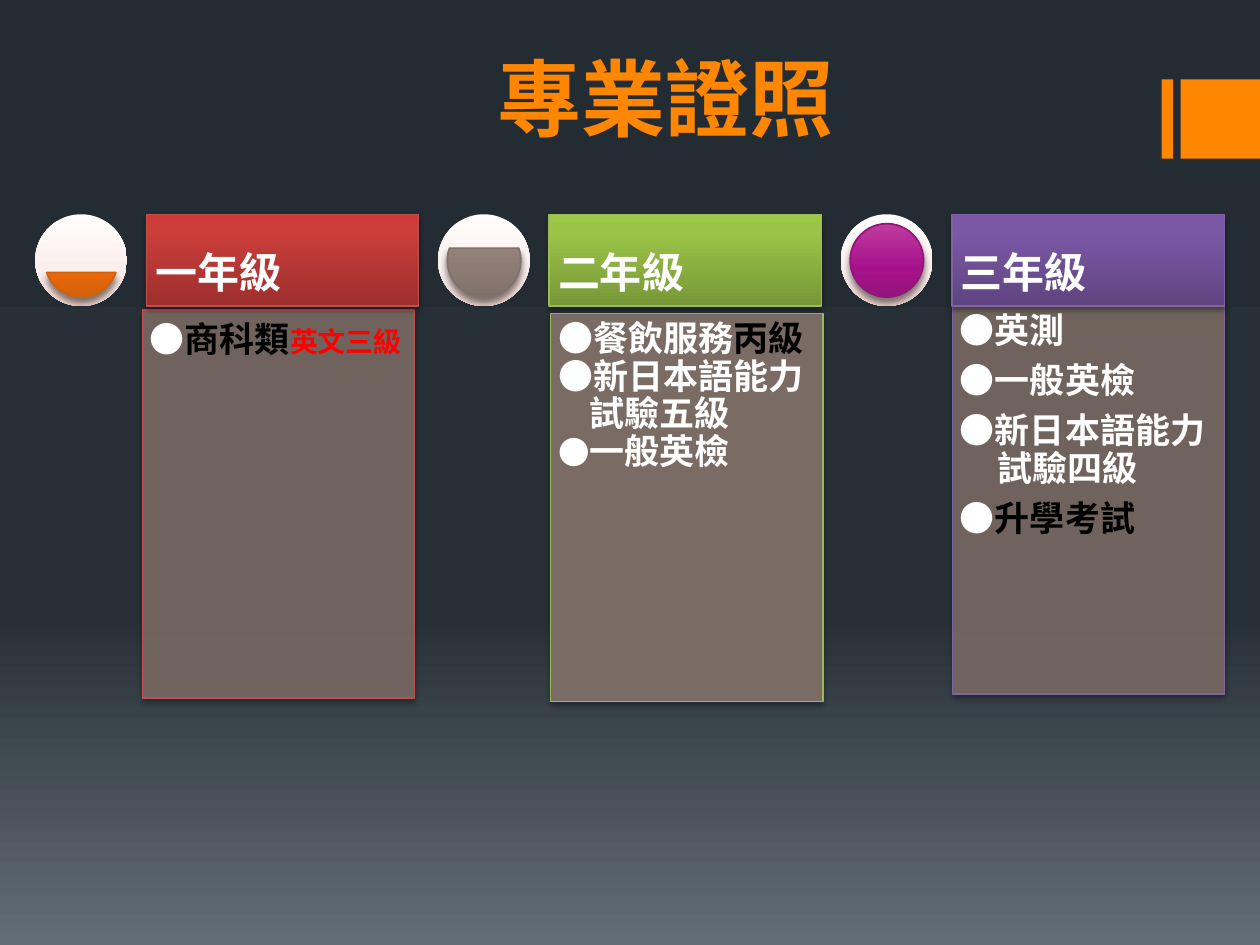
from lxml.etree import SubElement
from pptx import Presentation
from pptx.dml.color import RGBColor
from pptx.enum.shapes import MSO_SHAPE as Shape
from pptx.enum.text import MSO_ANCHOR as Anchor, MSO_AUTO_SIZE as AutoSize, PP_ALIGN as Align
from pptx.oxml.ns import qn
from pptx.util import Cm, Pt

FONT = "Noto Sans CJK SC"
COLORS = {
    "orange": "FF8600", "white": "FFFFFF", "black": "000000", "red": "FF0000", "panel": "7A6B65",
    "red edge": "C0504D", "green edge": "9BBB59", "purple edge": "8064A2",
}
GRADIENTS = {
    "page": [(0, "242C33"), (65, "273037"), (100, "636D76")],
    "ring": [(0, "FFFEFD"), (60, "FAEFED"), (100, "EED2CC")],
    "orange": [(0, "EE7F4C"), (60, "EE6A07"), (100, "D2610C")],
    "brown": [(0, "9B8C86"), (60, "8D7C74"), (100, "80716A")],
    "magenta": [(0, "BF3B9F"), (60, "A7128B"), (100, "94147C")],
    "red": [(0, "CE3B37"), (20, "CB3E3A"), (100, "9C2F2D")],
    "green": [(0, "9DC746"), (20, "9BC348"), (100, "779737")],
    "purple": [(0, "7C57A8"), (20, "7B58A6"), (100, "5F4480")],
}


def paint_gradient(owner, fill, name):
    fill.gradient()
    fill.gradient_angle = 270
    stops = next(owner.iter(qn("a:gsLst")))
    for stop in list(stops):
        stops.remove(stop)
    for position, color in GRADIENTS[name]:
        stop = SubElement(stops, qn("a:gs"), pos=str(position * 1000))
        SubElement(stop, qn("a:srgbClr"), val=color)


def cast_shadow(shape, opacity, blur, distance):
    shape.shadow.inherit = False
    effects = shape._element.spPr.find(qn("a:effectLst"))
    shadow = SubElement(effects, qn("a:outerShdw"), blurRad=str(Pt(blur)),
                        dist=str(Pt(distance)), dir="5400000", rotWithShape="0")
    color = SubElement(shadow, qn("a:srgbClr"), val=COLORS["black"])
    SubElement(color, qn("a:alpha"), val=str(opacity * 1000))


deck = Presentation()
deck.slide_width, deck.slide_height = Cm(25.4), Cm(19.05)
page = deck.slides.add_slide(deck.slide_layouts.get_by_name("Comparison"))
paint_gradient(page._element, page.background.fill, "page")

for left, width in [(23.42, 0.23), (23.8, 1.6)]:
    bar = page.shapes.add_shape(Shape.RECTANGLE, Cm(left), Cm(1.6), Cm(width), Cm(1.6))
    bar.shadow.inherit = False
    bar.fill.solid()
    bar.fill.fore_color.rgb = RGBColor.from_string(COLORS["orange"])
    bar.line.fill.background()

title = page.shapes.title
title.left, title.top, title.width, title.height = Cm(6.35), Cm(0.97), Cm(14.15), Cm(1.96)
texts = [(title, Anchor.MIDDLE, Align.CENTER, 0.25, 48, 1, 0, "orange",
          [(0, 0, [("專業證照", {})])])]

BLACK = {"color": "black"}
GRADES = [
    ("一年級", "red", "orange", (11.68, 96.32), (2.87, 6.25), 90, 1, 0, [
        (0, 0, [("●", {}), ("商科類", BLACK), ("英文三級", {"color": "red", "size": 16})]),
    ]),
    ("二年級", "green", "brown", (204.32, 119.68), (11.1, 6.32), 100, 0.9, 0, [
        (0, 0, [("●餐飲服務", {}), ("丙級", BLACK)]),
        (0, 0, [("●新日本語能力", {})]),
        (0.64, 0, [("試驗五級", {})]),
        (0.48, -0.48, [("●", {"size": 18}), ("一般英檢", {})]),
    ]),
    ("三年級", "purple", "magenta", (162, 162), (19.2, 6.17), 90, 0.9, 7, [
        (0, 0, [("●", {}), ("英測", {"font": "Arial"})]),
        (0, 0, [("●一般英檢", {})]),
        (0.76, -0.76, [("●新日本語能力試驗四級", {})]),
        (0, 0, [("●", {}), ("升學考試", BLACK)]),
    ]),
]

panels = [box for box in page.placeholders if box.placeholder_format.idx in (1, 2, 3)]
for box in list(page.placeholders):
    if box.placeholder_format.idx > 3:
        box._element.getparent().remove(box._element)

for index, (grade, theme, level, angles, corner, opacity, spacing, after, items) in enumerate(GRADES):
    offset = 8.12 * index
    edge = RGBColor.from_string(COLORS[theme + " edge"])

    ring = page.shapes.add_shape(Shape.OVAL, Cm(0.71 + offset), Cm(4.32), Cm(1.85), Cm(1.85))
    ring.shadow.inherit = False
    paint_gradient(ring._element, ring.fill, "ring")
    ring.line.fill.background()

    gauge = page.shapes.add_shape(Shape.CHORD, Cm(0.9 + offset), Cm(4.51), Cm(1.48), Cm(1.48))
    gauge.adjustments[0], gauge.adjustments[1] = angles
    paint_gradient(gauge._element, gauge.fill, level)
    gauge.line.color.rgb = RGBColor.from_string(GRADIENTS[level][-1][1])
    gauge.line.width = Pt(1)
    cast_shadow(gauge, 48, 3.8, 3)

    panel = panels[index]
    panel.left, panel.top, panel.width, panel.height = Cm(corner[0]), Cm(corner[1]), Cm(5.49), Cm(7.82)
    panel.fill.solid()
    panel.fill.fore_color.rgb = RGBColor.from_string(COLORS["panel"])
    color = next(panel._element.spPr.iter(qn("a:srgbClr")))
    SubElement(color, qn("a:alpha"), val=str(opacity * 1000))

    header = page.shapes.add_shape(Shape.RECTANGLE, Cm(2.95 + offset), Cm(4.32), Cm(5.49), Cm(1.85))
    paint_gradient(header._element, header.fill, theme)
    for shape in (panel, header):
        shape.line.color.rgb = edge
        shape.line.width = Pt(0.75)
        cast_shadow(shape, 35, 3.1, 1.8)

    texts.append((panel, Anchor.TOP, Align.LEFT, 0.15, 20, spacing, after, "white", items))
    texts.append((header, Anchor.BOTTOM, Align.LEFT, 0.18, 24, 0.9, 0, "white",
                  [(0, 0, [(grade, {})])]))

for box, anchor, align, inset, size, spacing, after, color, items in texts:
    frame = box.text_frame
    frame.word_wrap = True
    frame.auto_size = AutoSize.NONE
    frame.vertical_anchor = anchor
    frame.margin_left = frame.margin_right = frame.margin_top = frame.margin_bottom = Cm(inset)
    for number, (margin, indent, spans) in enumerate(items):
        para = frame.add_paragraph() if number else frame.paragraphs[0]
        para.alignment = align
        para.line_spacing = spacing
        para.space_before, para.space_after = Pt(0), Pt(after)
        properties = para._p.get_or_add_pPr()
        properties.set("marL", str(Cm(margin)))
        properties.set("indent", str(Cm(indent)))
        SubElement(properties, qn("a:buNone"))
        para.font.size = Pt(size)
        para.font.bold = True
        para.font.name = FONT
        para.font.color.rgb = RGBColor.from_string(COLORS[color])
        SubElement(properties.find(qn("a:defRPr")), qn("a:ea"), typeface=FONT)
        for text, style in spans:
            span = para.add_run()
            span.text = text
            if "color" in style:
                span.font.color.rgb = RGBColor.from_string(COLORS[style["color"]])
            if "size" in style:
                span.font.size = Pt(style["size"])
            if "font" in style:
                span.font.name = style["font"]

deck.save("out.pptx")
